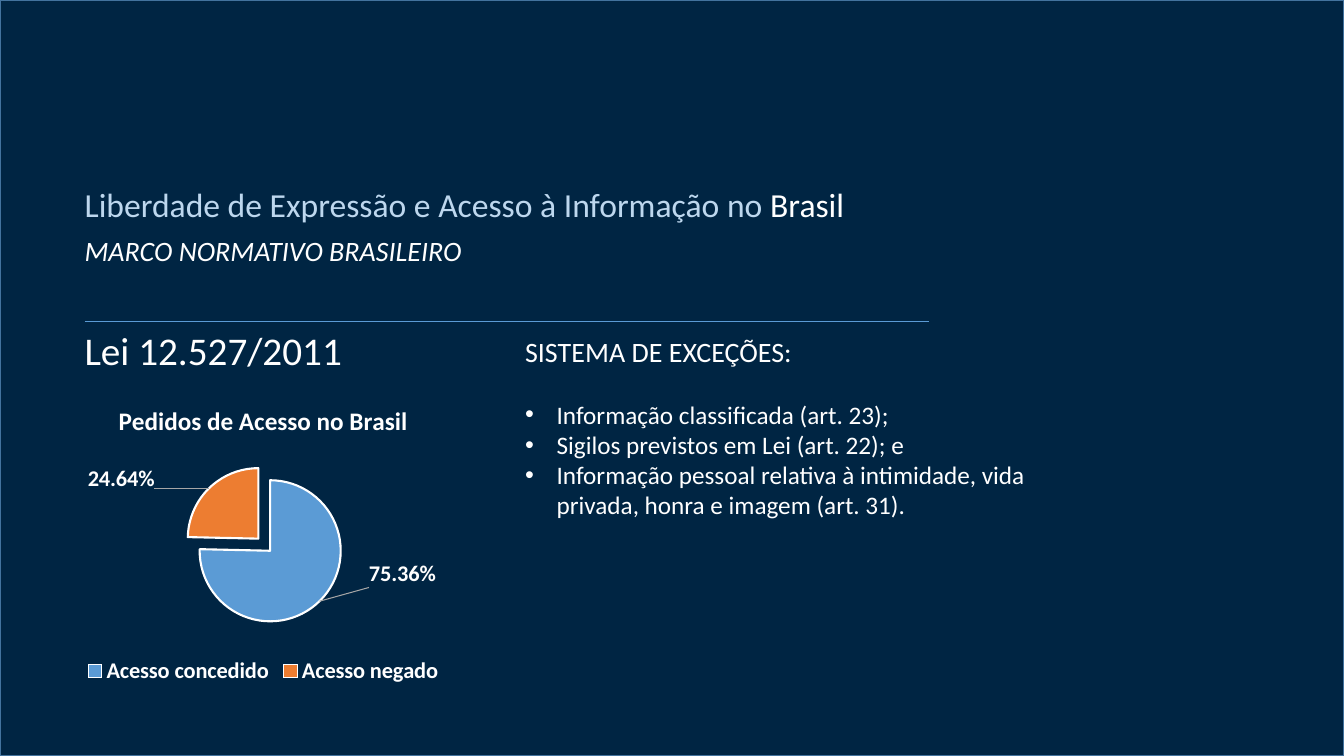
from lxml import etree
from pptx import Presentation
from pptx.chart.data import CategoryChartData
from pptx.dml.color import RGBColor
from pptx.enum import chart as ch, shapes, text
from pptx.oxml import parse_xml
from pptx.oxml.ns import nsdecls, qn
from pptx.util import Pt

NAVY = RGBColor(0x00, 0x25, 0x43)
EDGE = RGBColor(0x43, 0x73, 0x9E)
WHITE = RGBColor(0xFF, 0xFF, 0xFF)
PALE = RGBColor(0xBD, 0xD7, 0xEE)
BLUE = RGBColor(0x5B, 0x9B, 0xD5)
ORANGE = RGBColor(0xED, 0x7D, 0x31)
FONT = "Calibri"
WIDTH, HEIGHT = 960, 540


def style(font, size, color=WHITE, bold=False, italic=False):
    font.name, font.size, font.bold, font.italic = FONT, Pt(size), bold, italic
    font.color.rgb = color


def manual_layout(x, y, w=None, h=None):
    """Chart layout in fractions of the chart; labels take it as an offset."""
    modes = "" if w is None else (
        '<c:layoutTarget val="inner"/><c:xMode val="edge"/><c:yMode val="edge"/>')
    size = "" if w is None else f'<c:w val="{w}"/><c:h val="{h}"/>'
    return parse_xml(
        f'<c:layout {nsdecls("c")}><c:manualLayout>{modes}<c:x val="{x}"/>'
        f'<c:y val="{y}"/>{size}</c:manualLayout></c:layout>')


def add_background(page):
    panel = page.shapes.add_shape(
        shapes.MSO_SHAPE.RECTANGLE, 0, 0, Pt(WIDTH), Pt(HEIGHT))
    panel.shadow.inherit = False
    panel.fill.solid()
    panel.fill.fore_color.rgb = NAVY
    panel.line.color.rgb = EDGE
    panel.line.width = Pt(1)
    # Behind the title
    page.shapes._spTree.remove(panel._element)
    page.shapes._spTree.insert(2, panel._element)


def add_label(page, left, top, width, height, words, size, italic=False):
    box = page.shapes.add_textbox(Pt(left), Pt(top), Pt(width), Pt(height))
    box.text_frame.word_wrap = False
    para = box.text_frame.paragraphs[0]
    para.text = words
    style(para.font, size, italic=italic)


def add_heading(page, left, top, width):
    # Title in two colours
    title = page.shapes.title
    title.left, title.top, title.width, title.height = (
        Pt(left), Pt(top), Pt(width), Pt(36))
    frame = title.text_frame
    frame.word_wrap = False
    frame.auto_size = text.MSO_AUTO_SIZE.NONE
    frame.vertical_anchor = text.MSO_ANCHOR.TOP
    para = frame.paragraphs[0]
    para.alignment = text.PP_ALIGN.LEFT
    para.line_spacing = 1.0
    para.space_before = Pt(0)
    for words, color in (
            ("Liberdade de Expressão e Acesso à Informação no ", PALE),
            ("Brasil", WHITE)):
        span = para.add_run()
        span.text = words
        style(span.font, 24, color)

    # Subtitle, rule and law
    add_label(page, left, top + 35.5, 287, 32, "MARCO NORMATIVO BRASILEIRO",
              20, italic=True)
    rule_y = Pt(top + 101.5)
    rule = page.shapes.add_connector(
        shapes.MSO_CONNECTOR.STRAIGHT, Pt(left + 7.2), rule_y,
        Pt(left + 610), rule_y)
    rule.line.color.rgb = BLUE
    rule.line.width = Pt(0.5)
    etree.SubElement(rule._element.spPr, qn("a:effectLst"))
    add_label(page, left, top + 101.5, 201, 41, "Lei 12.527/2011", 28)


def add_exceptions(page, left, top, width, height):
    box = page.shapes.add_textbox(Pt(left), Pt(top), Pt(width), Pt(height))
    frame = box.text_frame
    frame.word_wrap = True
    frame.paragraphs[0].text = "SISTEMA DE EXCEÇÕES:"
    style(frame.paragraphs[0].font, 20)
    items = ("Informação classificada (art. 23);",
             "Sigilos previstos em Lei (art. 22); e",
             "Informação pessoal relativa à intimidade, vida privada, "
             "honra e imagem (art. 31).")
    for index, item in enumerate(items):
        para = frame.add_paragraph()
        para.text = item
        props = para._p.get_or_add_pPr()
        props.set("marL", str(Pt(22.5)))
        props.set("indent", str(-Pt(22.5)))
        etree.SubElement(props, qn("a:buFont")).set("typeface", "Arial")
        etree.SubElement(props, qn("a:buChar")).set("char", "•")
        para.space_before = Pt(22 if index == 0 else 0)
        style(para.font, 18)


def add_requests_chart(page, left, top, width, height):
    data = CategoryChartData(number_format="0.00%")
    data.categories = ["Acesso concedido", "Acesso negado"]
    data.add_series("Pedidos", (0.7536, 0.2464))
    chart = page.shapes.add_chart(
        ch.XL_CHART_TYPE.PIE, Pt(left), Pt(top), Pt(width), Pt(height),
        data).chart
    chart.font.name, chart.font.size = FONT, Pt(10)

    # Title and legend
    chart.has_title = True
    para = chart.chart_title.text_frame.paragraphs[0]
    para.text = "Pedidos de Acesso no Brasil"
    style(para.font, 18, bold=True)
    chart.chart_title._element.tx.addnext(parse_xml(
        f'<c:layout {nsdecls("c")}><c:manualLayout><c:xMode val="edge"/>'
        '<c:yMode val="edge"/><c:x val="0.21"/><c:y val="0.06"/>'
        '</c:manualLayout></c:layout>'))
    chart.has_legend = True
    chart.legend.position = ch.XL_LEGEND_POSITION.BOTTOM
    chart.legend.include_in_layout = False
    style(chart.legend.font, 16, bold=True)

    # Pie area
    area = chart._chartSpace.chart.plotArea
    for old in area.findall(qn("c:layout")):
        area.remove(old)
    area.insert(0, manual_layout(0.37, 0.3, 0.28, 0.47))

    # Labels
    plot = chart.plots[0]
    plot.vary_by_categories = True
    series = plot.series[0]
    labels = series.data_labels
    labels.show_value = True
    labels.number_format = "0.00%"
    labels.number_format_is_linked = False
    labels.position = ch.XL_LABEL_POSITION.OUTSIDE_END
    style(labels.font, 16, bold=True)

    # Slices: colour, explosion, label offset
    for index, (color, burst, shift) in enumerate((
            (BLUE, 4, (0.09, -0.15)), (ORANGE, 20, (-0.1, 0.03)))):
        point = series.points[index]
        point.format.fill.solid()
        point.format.fill.fore_color.rgb = color
        point.format.line.color.rgb = WHITE
        point.format.line.width = Pt(1.5)
        slice_xml = series._element.findall(qn("c:dPt"))[index]
        slice_xml.find(qn("c:spPr")).addprevious(
            parse_xml(f'<c:explosion {nsdecls("c")} val="{burst}"/>'))
        label = parse_xml(
            f'<c:dLbl {nsdecls("c")}><c:idx val="{index}"/>'
            '<c:dLblPos val="outEnd"/><c:showLegendKey val="0"/>'
            '<c:showVal val="1"/><c:showCatName val="0"/>'
            '<c:showSerName val="0"/><c:showPercent val="0"/>'
            '<c:showBubbleSize val="0"/></c:dLbl>')
        label.insert(1, manual_layout(*shift))
        labels._element.insert(index, label)

    # Leader lines
    for tag in ("c:showLeaderLines", "c:leaderLines"):
        for old in labels._element.findall(qn(tag)):
            labels._element.remove(old)
    etree.SubElement(labels._element, qn("c:showLeaderLines")).set("val", "1")
    labels._element.append(parse_xml(
        f'<c:leaderLines {nsdecls("c", "a")}><c:spPr><a:ln w="9525"><a:solidFill>'
        '<a:srgbClr val="A6A6A6"/></a:solidFill></a:ln></c:spPr></c:leaderLines>'))


def main():
    deck = Presentation()
    deck.slide_width, deck.slide_height = Pt(WIDTH), Pt(HEIGHT)
    page = deck.slides.add_slide(deck.slide_layouts[5])
    add_background(page)
    add_heading(page, 53.3, 128, 562)
    add_exceptions(page, 368, 235.5, 389.5, 140.5)
    add_requests_chart(page, 8, 276.5, 360, 216)
    deck.save("out.pptx")


if __name__ == "__main__":
    main()
